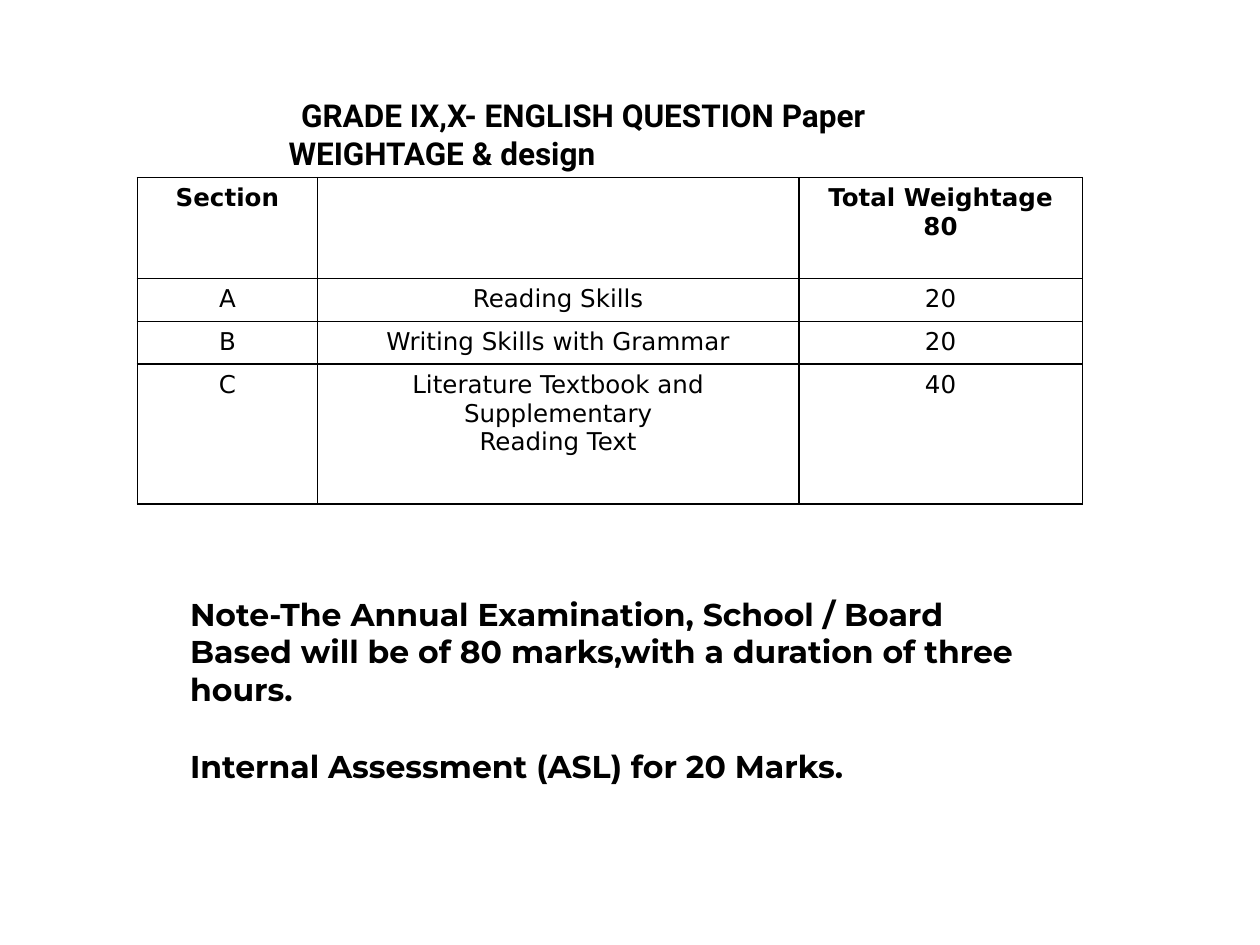
from pptx import Presentation, util as u
from pptx.dml import color
from pptx.enum import text
from pptx.oxml import parse_xml
from pptx.oxml import ns

COLORS = {"ink": "000000", "paper": "FFFFFF"}


class SlideBuilder:
    heading_font = "Roboto"
    table_font = "DejaVu Sans"
    note_font = "Montserrat"

    def __init__(self, deck):
        self.slide = deck.slides.add_slide(deck.slide_layouts[5])

    def rgb(self, name):
        return color.RGBColor.from_string(COLORS[name])

    def add_lines(self, frame, lines, font, size, bold, align):
        for index, line in enumerate(lines):
            para = frame.paragraphs[0] if index == 0 else frame.add_paragraph()
            para.alignment = align
            span = para.add_run()
            span.text = line
            span.font.name = font
            span.font.size = u.Pt(size)
            span.font.bold = bold
            span.font.color.rgb = self.rgb("ink")

    def fill_box(self, box, place, lines, font):
        box.left, box.top, box.width, box.height = map(u.Inches, place)
        frame = box.text_frame
        frame.word_wrap = True
        frame.auto_size = text.MSO_AUTO_SIZE.NONE
        frame.vertical_anchor = text.MSO_ANCHOR.TOP
        self.add_lines(frame, lines, font, 18, True, text.PP_ALIGN.LEFT)
        return frame

    def title(self, place, lines, first_indent):
        frame = self.fill_box(self.slide.shapes.title, place, lines, self.heading_font)
        frame.paragraphs[0]._p.get_or_add_pPr().set("indent", str(u.Inches(first_indent)))

    def note(self, place, lines, top_margin, gap):
        box = self.slide.shapes.add_textbox(*map(u.Inches, place))
        frame = self.fill_box(box, place, lines, self.note_font)
        frame.margin_top = u.Inches(top_margin)
        for para in frame.paragraphs[1:]:
            para.space_before = u.Pt(gap)

    def border(self, cell):
        properties = cell._tc.get_or_add_tcPr()
        for side in ("lnL", "lnR", "lnT", "lnB"):
            properties.append(parse_xml(
                f'<a:{side} {ns.nsdecls("a")} w="{u.Pt(1)}"><a:solidFill>'
                f'<a:srgbClr val="{COLORS["ink"]}"/></a:solidFill></a:{side}>'))

    def table(self, left, top, widths, heights, rows):
        place = map(u.Inches, (left, top, sum(widths), sum(heights)))
        table = self.slide.shapes.add_table(len(rows), len(widths), *place).table
        table.first_row = table.horz_banding = False
        for column, width in zip(table.columns, widths):
            column.width = u.Inches(width)
        for r, (height, row) in enumerate(zip(heights, rows)):
            table.rows[r].height = u.Inches(height)
            for c, lines in enumerate(row):
                cell = table.cell(r, c)
                self.border(cell)
                cell.fill.solid()
                cell.fill.fore_color.rgb = self.rgb("paper")
                self.add_lines(cell.text_frame, lines, self.table_font, 14, r == 0,
                               text.PP_ALIGN.CENTER)


def main():
    deck = Presentation()
    deck.slide_width, deck.slide_height = u.Inches(10), u.Inches(7.5)
    builder = SlideBuilder(deck)
    builder.title((2.19, 0.71, 5, 0.7),
                  ["GRADE IX,X- ENGLISH QUESTION Paper", "WEIGHTAGE & design"], 0.1)
    builder.table(1.09, 1.41, (1.43, 3.82, 2.25), (0.8, 0.34, 0.34, 1.11), [
        (["Section"], [], ["Total Weightage 80"]),
        (["A"], ["Reading Skills"], ["20"]),
        (["B"], ["Writing Skills with Grammar"], ["20"]),
        (["C"], ["Literature Textbook and Supplementary", "Reading Text"], ["40"]),
    ])
    builder.note((1.41, 4.07, 7.05, 3.13), [
        "Note-The Annual Examination, School / Board Based will be of 80 marks,"
        "with a duration of three hours.",
        "Internal Assessment (ASL) for 20 Marks.",
    ], 0.65, 22)
    deck.save("out.pptx")


if __name__ == "__main__":
    main()
